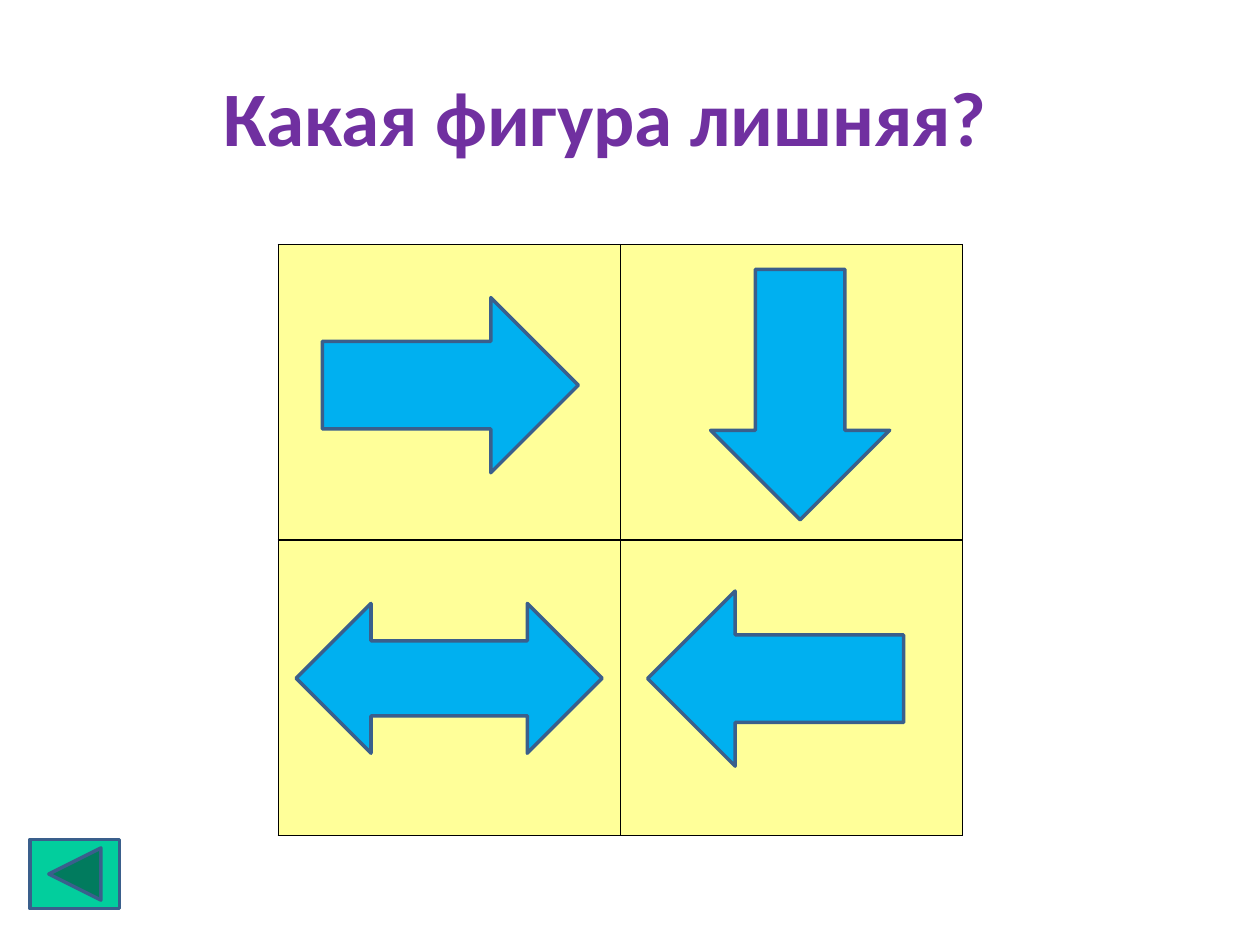
from dataclasses import dataclass

from lxml.etree import SubElement
from pptx import Presentation
from pptx.dml.color import RGBColor
from pptx.enum.shapes import MSO_SHAPE
from pptx.enum.text import MSO_ANCHOR, PP_ALIGN
from pptx.oxml.ns import qn
from pptx.util import Cm, Pt


@dataclass(frozen=True)
class Theme:
    font: str = "Calibri"
    title_size: int = 44
    title: str = "7030A0"
    cell: str = "FFFF99"
    border: str = "000000"
    border_width: int = 1
    arrow: str = "00B0F0"
    button: str = "02CE9D"
    outline: str = "3A5F8C"
    outline_width: int = 2


@dataclass(frozen=True)
class Box:
    """A region in centimetres."""
    left: float
    top: float
    width: float
    height: float

    def lengths(self):
        return Cm(self.left), Cm(self.top), Cm(self.width), Cm(self.height)


THEME = Theme()

# Arrows by row and column: preset, rotation, box relative to the cell
ARROWS = [
    [(MSO_SHAPE.RIGHT_ARROW, 0, Box(0.89, 1.07, 5.16, 3.53)),
     (MSO_SHAPE.RIGHT_ARROW, 90, Box(1.1, 1.22, 5.05, 3.61))],
    [(MSO_SHAPE.LEFT_RIGHT_ARROW, 0, Box(0.36, 1.28, 6.17, 3.02)),
     (MSO_SHAPE.RIGHT_ARROW, 180, Box(0.55, 1.03, 5.16, 3.53))],
]


def add_outlined_shape(slide, preset, box, fill, rotation=0):
    shape = slide.shapes.add_shape(preset, *box.lengths())
    shape.rotation = rotation
    shape.shadow.inherit = False
    shape.fill.solid()
    shape.fill.fore_color.rgb = RGBColor.from_string(fill)
    shape.line.color.rgb = RGBColor.from_string(THEME.outline)
    shape.line.width = Pt(THEME.outline_width)


def add_title(slide, box, text):
    text_frame = slide.shapes.add_textbox(*box.lengths()).text_frame
    text_frame.word_wrap = True
    text_frame.vertical_anchor = MSO_ANCHOR.MIDDLE
    text_frame.text = text
    paragraph = text_frame.paragraphs[0]
    paragraph.alignment = PP_ALIGN.CENTER
    font = paragraph.runs[0].font
    font.name = THEME.font
    font.size = Pt(THEME.title_size)
    font.bold = True
    font.color.rgb = RGBColor.from_string(THEME.title)


def format_cell(cell):
    # Borders come before the fill in the cell properties
    properties = cell._tc.get_or_add_tcPr()
    for side in ("a:lnL", "a:lnR", "a:lnT", "a:lnB"):
        line = SubElement(properties, qn(side), w=str(Pt(THEME.border_width)))
        line_fill = SubElement(line, qn("a:solidFill"))
        SubElement(line_fill, qn("a:srgbClr"), val=THEME.border)
    cell.fill.solid()
    cell.fill.fore_color.rgb = RGBColor.from_string(THEME.cell)


def add_arrow_grid(slide, box, arrows):
    row_count, column_count = len(arrows), len(arrows[0])
    cell_width, cell_height = box.width / column_count, box.height / row_count
    table = slide.shapes.add_table(row_count, column_count, *box.lengths()).table
    for cell in table.iter_cells():
        format_cell(cell)

    # One arrow in each cell
    for row, row_arrows in enumerate(arrows):
        for column, (preset, rotation, inner) in enumerate(row_arrows):
            arrow_box = Box(box.left + column * cell_width + inner.left,
                            box.top + row * cell_height + inner.top,
                            inner.width, inner.height)
            add_outlined_shape(slide, preset, arrow_box, THEME.arrow, rotation)


def add_back_button(slide, box):
    add_outlined_shape(slide, MSO_SHAPE.ACTION_BUTTON_BACK_OR_PREVIOUS, box, THEME.button)


def main():
    presentation = Presentation()
    presentation.slide_width = Cm(25.4)
    presentation.slide_height = Cm(19.05)
    slide = presentation.slides.add_slide(presentation.slide_layouts[6])

    add_title(slide, Box(2.49, 0.74, 19.43, 3.18), "Какая фигура лишняя?")
    add_arrow_grid(slide, Box(5.61, 4.93, 13.79, 11.91), ARROWS)
    add_back_button(slide, Box(0.61, 16.92, 1.8, 1.4))

    presentation.save("out.pptx")


if __name__ == "__main__":
    main()
